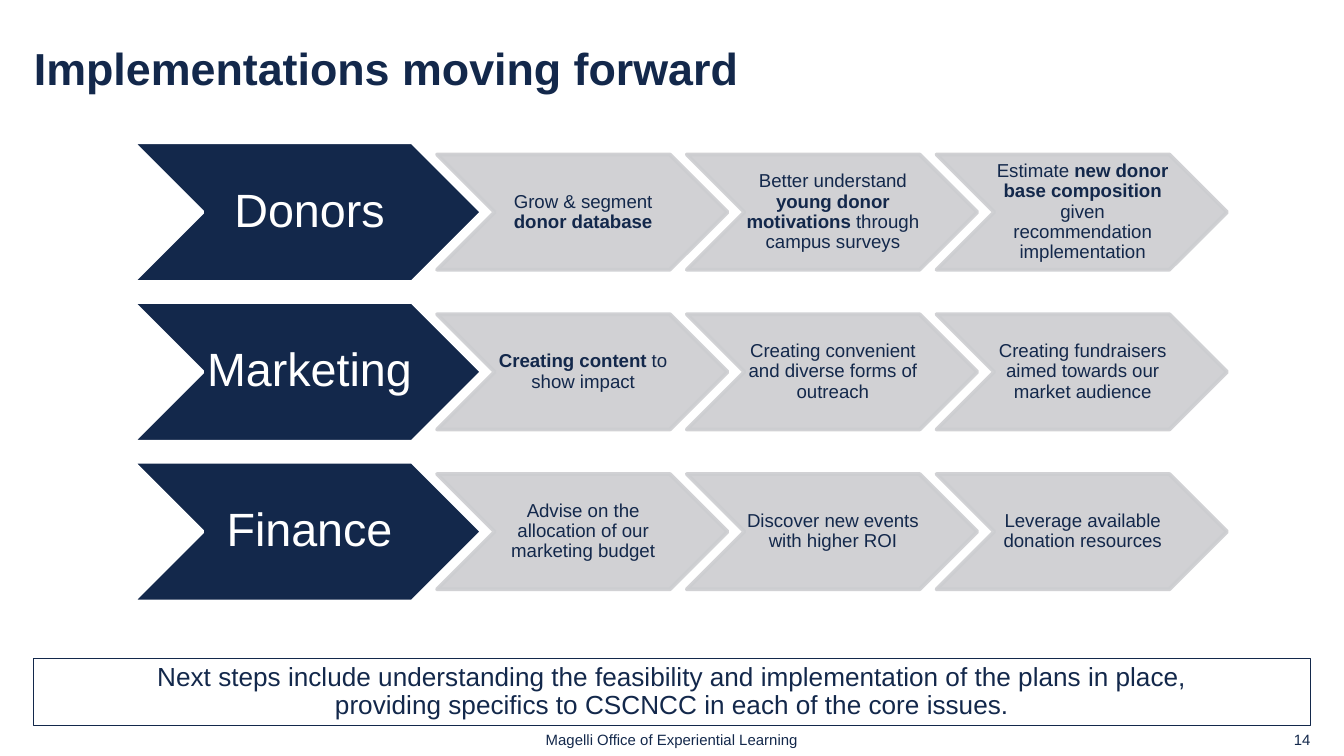
from dataclasses import dataclass

import pptx
import pptx.util
from lxml import etree
from pptx.dml.color import RGBColor
from pptx.enum.shapes import MSO_SHAPE
from pptx.enum.text import MSO_ANCHOR, MSO_AUTO_SIZE, PP_ALIGN
from pptx.oxml.ns import qn
from pptx.util import Cm, Pt


@dataclass(frozen=True)
class Theme:
    face: str = "Arial"
    navy: RGBColor = RGBColor(0x13, 0x28, 0x4B)
    grey: RGBColor = RGBColor(0xCC, 0xCD, 0xD0)
    white: RGBColor = RGBColor(0xFF, 0xFF, 0xFF)
    title: int = 24
    lead: int = 25
    step: int = 10
    note: int = 14
    foot: int = 8


THEME = Theme()
EDGE, WIDE = 0.64, 24.13
ROW_TOP, ROW_GAP = 2.69, 3.02
LEAD_X, LEAD_W, LEAD_H = 2.51, 6.6, 2.64
STEP_X, STEP_GAP, STEP_W, STEP_H = 8.26, 4.72, 5.49, 2.18

# Text between asterisks is bold.
ROWS = [
    ("Donors", [
        "Grow & segment *donor database*",
        "Better understand *young donor motivations* through campus surveys",
        "Estimate *new donor base composition* given recommendation implementation",
    ]),
    ("Marketing", [
        "*Creating content* to show impact",
        "Creating convenient and diverse forms of outreach",
        "Creating fundraisers aimed towards our market audience",
    ]),
    ("Finance", [
        "Advise on the allocation of our marketing budget",
        "Discover new events with higher ROI",
        "Leverage available donation resources",
    ]),
]


def place(shape, left, top, width, height):
    shape.left, shape.top = Cm(left), Cm(top)
    shape.width, shape.height = Cm(width), Cm(height)


def write(shape, text, size, color, align=PP_ALIGN.CENTER, pad=(0, 0, 0, 0), space=0.9):
    """Fill a shape with one paragraph; pad is left, top, right, bottom in cm."""
    frame = shape.text_frame
    frame.word_wrap = True
    frame.auto_size = MSO_AUTO_SIZE.NONE
    frame.vertical_anchor = MSO_ANCHOR.MIDDLE
    frame.margin_left, frame.margin_top, frame.margin_right, frame.margin_bottom = map(Cm, pad)
    para = frame.paragraphs[0]
    para.alignment = align
    para.line_spacing = space
    font = para.font
    font.name, font.size, font.color.rgb = THEME.face, Pt(size), color
    for i, part in enumerate(text.split("*")):
        if part:
            run = para.add_run()
            run.text = part
            if i % 2:
                run.font.bold = True
    return para


def fade(shape, share):
    """Make the fill and line colours of a shape opaque to the given percentage."""
    for color in shape._element.spPr.iter(qn("a:srgbClr")):
        etree.SubElement(color, qn("a:alpha"), val=str(share * 1000))


def draw(slide, kind, box, line, weight, fill=None):
    shape = slide.shapes.add_shape(kind, *map(Cm, box))
    shape.shadow.inherit = False
    if fill is None:
        shape.fill.background()
    else:
        shape.fill.solid()
        shape.fill.fore_color.rgb = fill
    shape.line.color.rgb = line
    shape.line.width = Pt(weight)
    return shape


def add_lead(slide, text, top):
    box = (LEAD_X, top, LEAD_W, LEAD_H)
    shape = draw(slide, MSO_SHAPE.CHEVRON, box, THEME.white, 2, THEME.navy)
    write(shape, text, THEME.lead, THEME.white, pad=(0.08, 0.04, 0, 0.04))


def add_step(slide, text, left, top):
    box = (left, top, STEP_W, STEP_H)
    shape = draw(slide, MSO_SHAPE.CHEVRON, box, THEME.grey, 2, THEME.grey)
    fade(shape, 90)
    write(shape, text, THEME.step, THEME.navy, pad=(0.03, 0.03, 0, 0.03))


def add_row(slide, name, steps, top):
    add_lead(slide, name, top)
    inset = (LEAD_H - STEP_H) / 2
    for i, text in enumerate(steps):
        add_step(slide, text, STEP_X + i * STEP_GAP, top + inset)


def add_title(slide, text):
    title = slide.shapes.title
    place(title, EDGE, 0.58, WIDE, 1.52)
    para = write(title, text, THEME.title, THEME.navy, PP_ALIGN.LEFT, (0, 0, 3.05, 0))
    para.font.bold = True


def add_note(slide, text):
    box = (EDGE, 12.45, WIDE, 1.27)
    shape = draw(slide, MSO_SHAPE.RECTANGLE, box, THEME.navy, 0.75)
    write(shape, text, THEME.note, THEME.navy, pad=(1.27, 0.25, 1.27, 0.25))


def add_foot(slide, text, left, width, align):
    box = slide.shapes.add_textbox(Cm(left), Cm(13.72), Cm(width), Cm(0.51))
    write(box, text, THEME.foot, THEME.navy, align, space=1.0)


def main():
    deck = pptx.Presentation()
    deck.slide_width, deck.slide_height = Cm(25.4), Cm(14.29)
    slide = deck.slides.add_slide(deck.slide_layouts[5])
    add_title(slide, "Implementations moving forward")
    for i, (name, steps) in enumerate(ROWS):
        add_row(slide, name, steps, ROW_TOP + i * ROW_GAP)
    add_note(slide, "Next steps include understanding the feasibility and implementation "
                    "of the plans in place, providing specifics to CSCNCC in each of the core issues.")
    add_foot(slide, "Magelli Office of Experiential Learning", 10.22, 4.96, PP_ALIGN.CENTER)
    add_foot(slide, "14", 19.05, 5.72, PP_ALIGN.RIGHT)
    deck.save("out.pptx")


if __name__ == "__main__":
    main()
